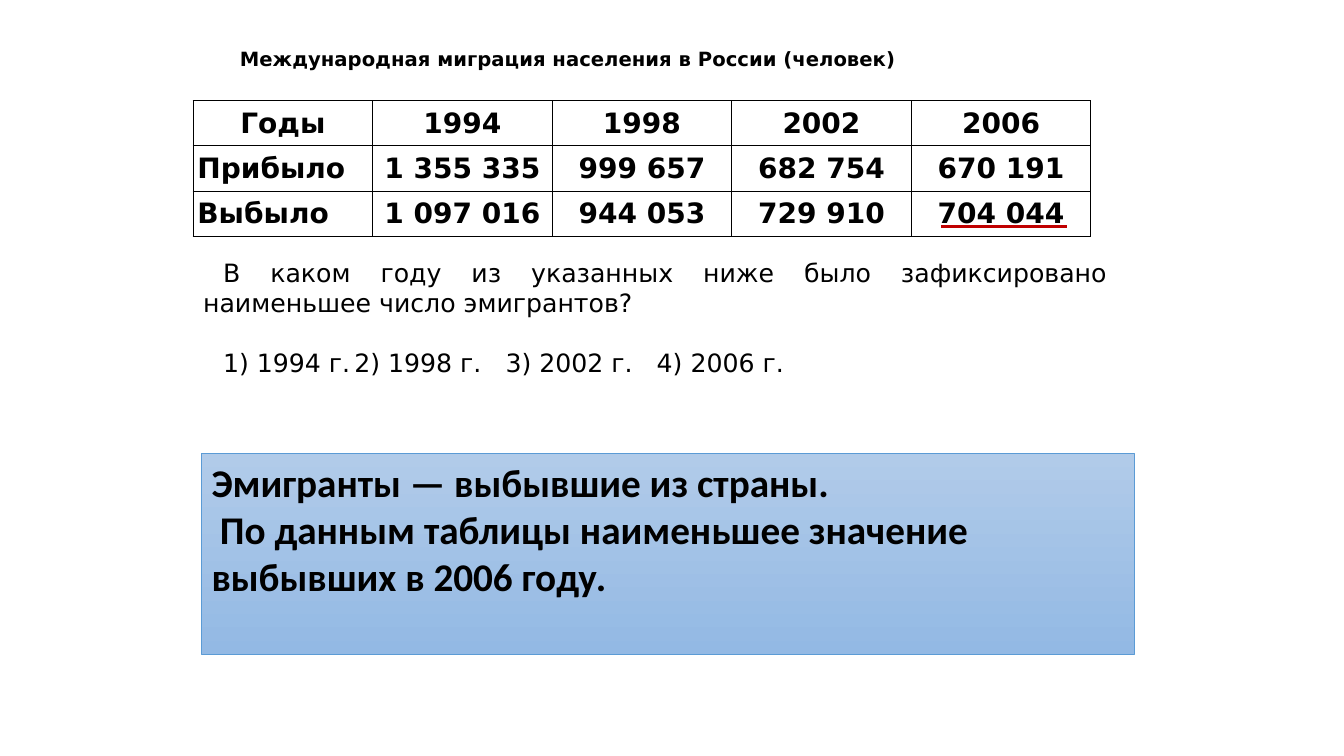
from dataclasses import dataclass

from lxml import etree
from pptx import Presentation
from pptx.dml.color import RGBColor
from pptx.enum.shapes import MSO_CONNECTOR, MSO_SHAPE
from pptx.enum.text import MSO_ANCHOR, PP_ALIGN
from pptx.oxml.ns import qn
from pptx.slide import Slide
from pptx.text.text import TextFrame, _Paragraph
from pptx.util import Emu, Pt

PX = 9525
LEFT, CENTER, JUSTIFY = PP_ALIGN.LEFT, PP_ALIGN.CENTER, PP_ALIGN.JUSTIFY
TOP, MIDDLE = MSO_ANCHOR.TOP, MSO_ANCHOR.MIDDLE
RECTANGLE, STRAIGHT = MSO_SHAPE.RECTANGLE, MSO_CONNECTOR.STRAIGHT
BORDER_SIDES = ("a:lnL", "a:lnR", "a:lnT", "a:lnB")


@dataclass(frozen=True)
class Theme:
    ink: str = "000000"
    accent: str = "C00000"
    panel_line: str = "5B9BD5"
    panel_stops: tuple[str, str] = ("B1CBE9", "93B9E4")
    font: str = "DejaVu Sans"
    panel_font: str = "Calibri"
    title_size: int = 14
    table_size: int = 20
    question_size: int = 18
    panel_size: int = 28


@dataclass(frozen=True)
class Area:
    left: int
    top: int
    width: int
    height: int

    def emu(self) -> tuple[Emu, ...]:
        return tuple(px(n) for n in (self.left, self.top, self.width, self.height))


@dataclass(frozen=True)
class Style:
    size: int
    font: str
    bold: bool
    align: PP_ALIGN


@dataclass(frozen=True)
class Line:
    text: str
    indent: int = 0
    space_before: int = 0
    tabs: tuple[int, ...] = ()


THEME = Theme()
TITLE_STYLE = Style(THEME.title_size, THEME.font, True, JUSTIFY)
QUESTION_STYLE = Style(THEME.question_size, THEME.font, False, JUSTIFY)
HEADING_STYLE = Style(THEME.table_size, THEME.font, True, LEFT)
VALUE_STYLE = Style(THEME.table_size, THEME.font, True, CENTER)
PANEL_STYLE = Style(THEME.panel_size, THEME.panel_font, True, LEFT)

TITLE = [Line("Международная миграция населения в России (человек)", indent=19)]
QUESTION = [
    Line("В каком году из указанных ниже было зафиксировано наименьшее число эмигрантов?",
         indent=19),
    Line("1) 1994 г.\t2) 1998 г.\t3) 2002 г.\t4) 2006 г.",
         indent=19, space_before=21, tabs=(216, 451, 610)),
]
ANSWER = [
    Line("Эмигранты — выбывшие из страны."),
    Line("По данным таблицы наименьшее значение выбывших в 2006 году.", indent=8),
]
MIGRATION = [
    ("Годы", "1994", "1998", "2002", "2006"),
    ("Прибыло", "1 355 335", "999 657", "682 754", "670 191"),
    ("Выбыло", "1 097 016", "944 053", "729 910", "704 044"),
]


def px(count: int) -> Emu:
    return Emu(count * PX)


def rgb(value: str) -> RGBColor:
    return RGBColor.from_string(value)


def write_line(para: _Paragraph, line: Line, style: Style) -> None:
    para.alignment = style.align
    if line.space_before:
        para.space_before = Pt(line.space_before)
    properties = para._p.get_or_add_pPr()
    if line.indent:
        properties.set("indent", str(px(line.indent)))
    if line.tabs:
        tab_list = etree.SubElement(properties, qn("a:tabLst"))
        for stop in line.tabs:
            etree.SubElement(tab_list, qn("a:tab"), pos=str(px(stop)), algn="l")
    span = para.add_run()
    span.text = line.text
    font_values = {"size": Pt(style.size), "name": style.font, "bold": style.bold}
    for name, value in font_values.items():
        setattr(span.font, name, value)
    span.font.color.rgb = rgb(THEME.ink)


def write_lines(frame: TextFrame, lines: list[Line], style: Style) -> None:
    frame.word_wrap = True
    frame.vertical_anchor = TOP
    for index, line in enumerate(lines):
        para = frame.add_paragraph() if index else frame.paragraphs[0]
        write_line(para, line, style)


def add_text(page: Slide, area: Area, lines: list[Line], style: Style) -> None:
    box = page.shapes.add_textbox(*area.emu())
    write_lines(box.text_frame, lines, style)


def add_migration_table(page: Slide, area: Area) -> None:
    rows, columns = len(MIGRATION), len(MIGRATION[0])
    table = page.shapes.add_table(rows, columns, *area.emu()).table
    table.first_row = table.horz_banding = False
    for column in table.columns:
        column.width = px(area.width // columns)
    for row in table.rows:
        row.height = px(area.height // rows)
    cell_values = {"vertical_anchor": MIDDLE}
    for side in ("left", "right", "top", "bottom"):
        cell_values[f"margin_{side}"] = px(4)
    for r, texts in enumerate(MIGRATION):
        for c, text in enumerate(texts):
            cell = table.cell(r, c)
            for name, value in cell_values.items():
                setattr(cell, name, value)
            for side in BORDER_SIDES:
                border = etree.SubElement(cell._tc.get_or_add_tcPr(), qn(side),
                                          w=str(Pt(0.75)))
                fill = etree.SubElement(border, qn("a:solidFill"))
                etree.SubElement(fill, qn("a:srgbClr"), val=THEME.ink)
            cell.fill.background()
            style = HEADING_STYLE if r and not c else VALUE_STYLE
            write_line(cell.text_frame.paragraphs[0], Line(text), style)


def add_answer_panel(page: Slide, area: Area) -> None:
    panel = page.shapes.add_shape(RECTANGLE, *area.emu())
    panel.shadow.inherit = False
    panel.fill.gradient()
    panel.fill.gradient_angle = 270
    for stop, color in zip(panel.fill.gradient_stops, THEME.panel_stops):
        stop.color.rgb = rgb(color)
    panel.line.color.rgb = rgb(THEME.panel_line)
    panel.line.width = Pt(0.5)
    write_lines(panel.text_frame, ANSWER, PANEL_STYLE)


def add_underline(page: Slide, left: int, right: int, top: int) -> None:
    underline = page.shapes.add_connector(STRAIGHT, px(left), px(top), px(right), px(top))
    underline.line.color.rgb = rgb(THEME.accent)
    underline.line.width = Pt(2.25)
    etree.SubElement(underline._element.spPr, qn("a:effectLst"))


def main() -> None:
    deck = Presentation()
    deck.slide_width, deck.slide_height = px(1280), px(720)
    page = deck.slides.add_slide(deck.slide_layouts[6])
    add_migration_table(page, Area(184, 96, 855, 129))
    add_text(page, Area(200, 40, 896, 55), TITLE, TITLE_STYLE)
    add_text(page, Area(184, 240, 880, 126), QUESTION, QUESTION_STYLE)
    add_answer_panel(page, Area(192, 432, 888, 191))
    add_underline(page, 896, 1016, 216)
    deck.save("out.pptx")


if __name__ == "__main__":
    main()
